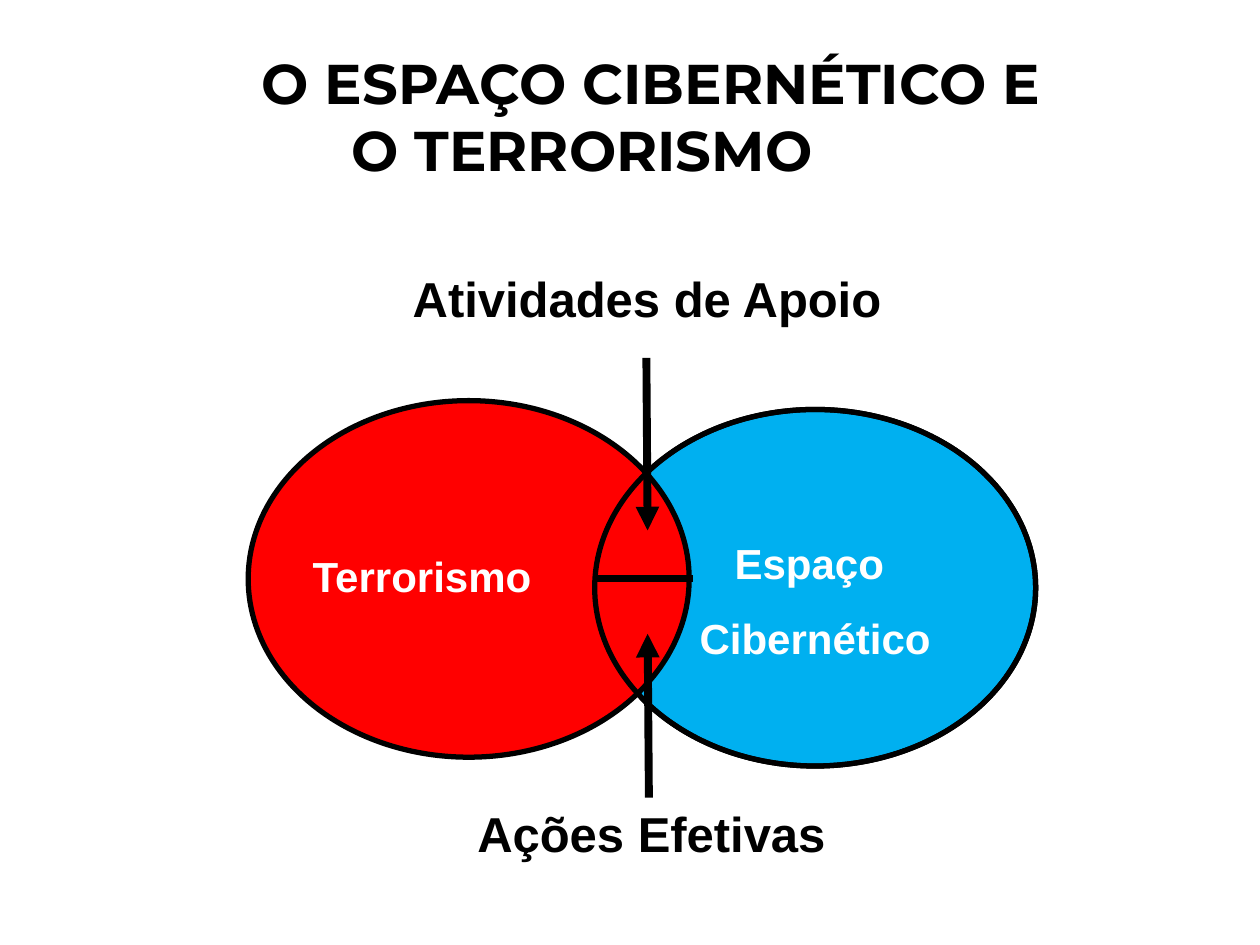
import pptx
import pptx.dml.color
import pptx.enum.shapes
import pptx.enum.text
import pptx.oxml
import pptx.oxml.ns
import pptx.util
from pptx.util import Inches

ALIGN = pptx.enum.text.PP_ALIGN
ANCHOR = pptx.enum.text.MSO_ANCHOR
BLACK, WHITE, RED, BLUE = "000000", "FFFFFF", "FF0000", "00B0F0"


def color(value):
    return pptx.dml.color.RGBColor.from_string(value)


class VennPage:
    body_font = "Arial"
    title_font = "Montserrat"

    def __init__(self, deck):
        self.page = deck.slides.add_slide(deck.slide_layouts[5])

    def add_span(self, para, text, size, ink=BLACK, font=None):
        span = para.add_run()
        span.text = text
        span.font.name = font or self.body_font
        span.font.size = pptx.util.Pt(size)
        span.font.bold = True
        span.font.color.rgb = color(ink)

    def title(self, lines, left, top, width, height, first_indent):
        box = self.page.shapes.title
        box.left, box.top = Inches(left), Inches(top)
        box.width, box.height = Inches(width), Inches(height)
        frame = box.text_frame
        frame.word_wrap = True
        frame.vertical_anchor = ANCHOR.MIDDLE
        para = frame.paragraphs[0]
        para.alignment = ALIGN.CENTER
        # The first line is pushed to the right of the second
        properties = para._p.get_or_add_pPr()
        properties.set("marL", "0")
        properties.set("indent", str(Inches(first_indent)))
        for index, line in enumerate(lines):
            if index:
                para.add_line_break()
            self.add_span(para, line, 32, font=self.title_font)

    def ellipse(self, left, top, fill=None, lines=(), align=ALIGN.CENTER,
                spacing=1.0, inset=0.1):
        shape = self.page.shapes.add_shape(
            pptx.enum.shapes.MSO_SHAPE.OVAL,
            Inches(left), Inches(top), Inches(3.5), Inches(2.83))
        shape.shadow.inherit = False
        if fill:
            shape.fill.solid()
            shape.fill.fore_color.rgb = color(fill)
        else:
            shape.fill.background()
        shape.line.color.rgb = color(BLACK)
        shape.line.width = pptx.util.Pt(3)
        frame = shape.text_frame
        frame.word_wrap = False
        frame.vertical_anchor = ANCHOR.MIDDLE
        frame.margin_left = Inches(inset)
        for index, line in enumerate(lines):
            para = frame.add_paragraph() if index else frame.paragraphs[0]
            para.alignment = align
            para.line_spacing = spacing
            self.add_span(para, line, 24, WHITE)

    def label(self, text, left, top, width):
        box = self.page.shapes.add_textbox(
            Inches(left), Inches(top), Inches(width), Inches(0.53))
        frame = box.text_frame
        frame.word_wrap = True
        frame.vertical_anchor = ANCHOR.BOTTOM
        frame.auto_size = pptx.enum.text.MSO_AUTO_SIZE.SHAPE_TO_FIT_TEXT
        para = frame.paragraphs[0]
        para.alignment = ALIGN.CENTER
        para.line_spacing = 0.9
        self.add_span(para, text, 28)

    def line(self, start, end, weight, arrow=False):
        connector = self.page.shapes.add_connector(
            pptx.enum.shapes.MSO_CONNECTOR.STRAIGHT,
            *map(Inches, start), *map(Inches, end))
        connector.line.color.rgb = color(BLACK)
        connector.line.width = pptx.util.Pt(weight)
        properties = connector._element.spPr
        if arrow:
            properties.get_or_add_ln().append(pptx.oxml.parse_xml(
                '<a:tailEnd %s type="triangle"/>' % pptx.oxml.ns.nsdecls("a")))
        properties.append(pptx.oxml.parse_xml(
            "<a:effectLst %s/>" % pptx.oxml.ns.nsdecls("a")))


def main():
    deck = pptx.Presentation()
    deck.slide_width, deck.slide_height = Inches(10), Inches(7.5)
    venn = VennPage(deck)
    venn.title(["O ESPAÇO CIBERNÉTICO E", "O TERRORISMO"],
               0.12, 0.13, 9, 1.57, first_indent=1.1)

    # Overlapping sets, with the overlap split in two
    cyberspace = (4.72, 3.25)
    venn.ellipse(*cyberspace, BLUE, ["Espaço ", "Cibernético"], spacing=1.5)
    venn.ellipse(1.97, 3.18, RED, ["Terrorismo"], ALIGN.LEFT, 0.9, inset=0)
    venn.line((4.72, 4.59), (5.5, 4.59), 4)

    # Labels with arrows into each half of the overlap
    venn.label("Ações Efetivas", 3.35, 6.37, 3.64)
    venn.line((5.15, 6.33), (5.14, 5.03), 4.5, arrow=True)
    venn.label("Atividades de Apoio", 3.03, 2.12, 4.21)
    venn.line((5.13, 2.84), (5.14, 4.21), 4.5, arrow=True)

    # Outline of the blue set over the red one
    venn.ellipse(*cyberspace)
    deck.save("out.pptx")


if __name__ == "__main__":
    main()
